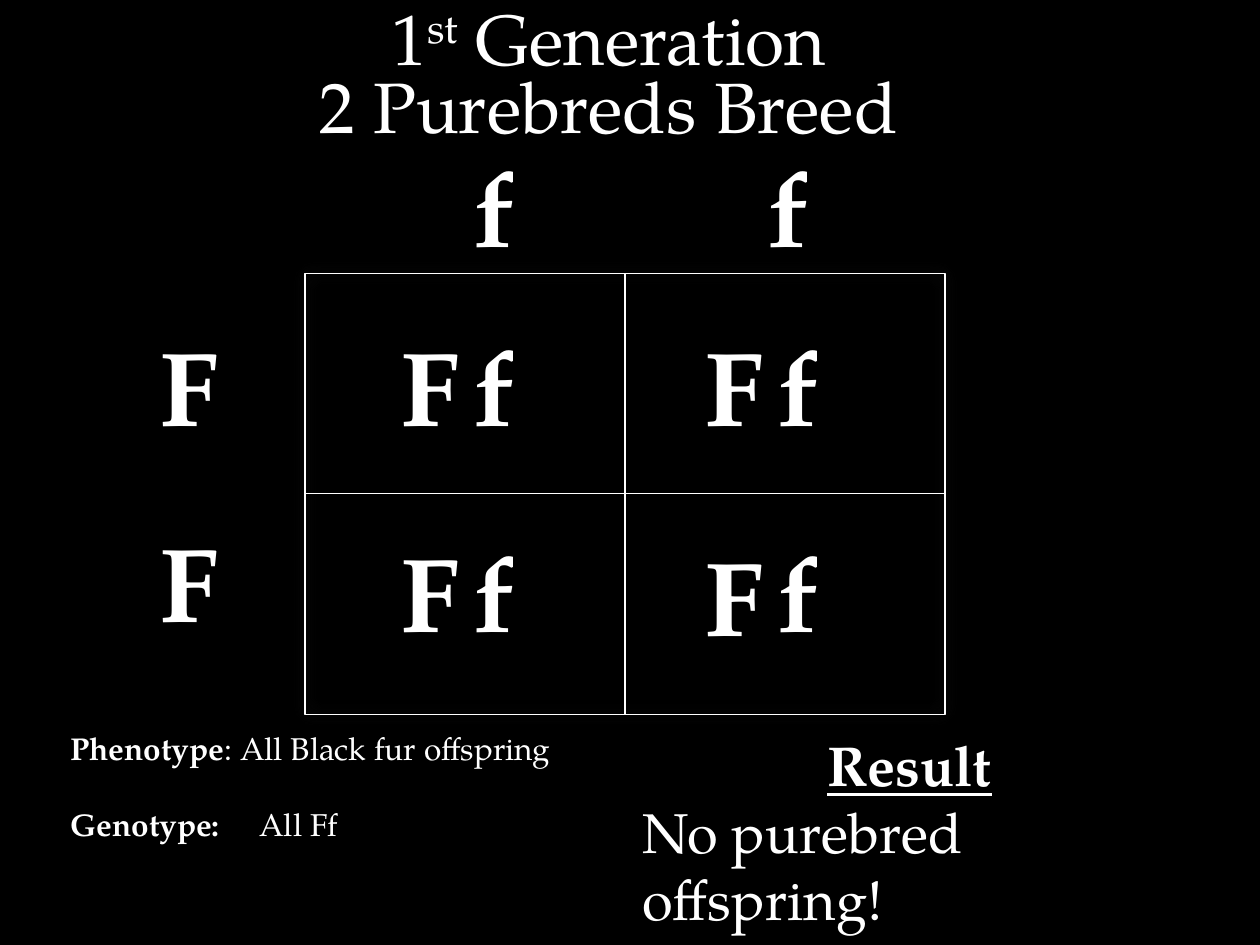
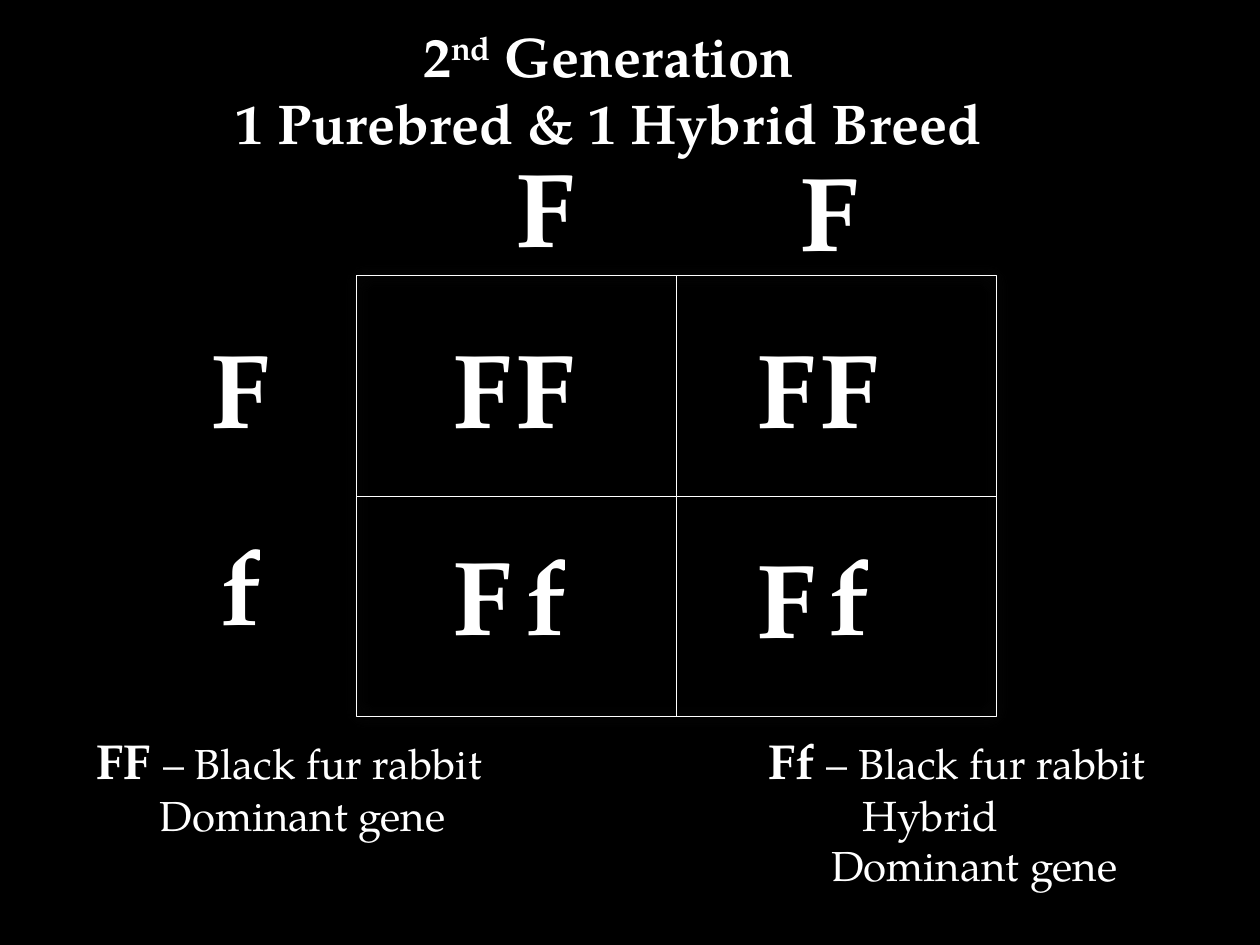
from dataclasses import dataclass

from lxml import etree
from pptx import Presentation
from pptx import util as u
from pptx.dml.color import RGBColor
from pptx.enum import shapes, text
from pptx.oxml.ns import qn


@dataclass(frozen=True)
class Theme:
    font: str = "TeX Gyre Pagella"
    ink: RGBColor = RGBColor(0xFF, 0xFF, 0xFF)
    ground: RGBColor = RGBColor(0, 0, 0)
    glow: str = "5F5F5F"
    gene: float = 60
    large_title: float = 40.7
    heading: float = 32
    key: float = 28
    legend: float = 24
    note: float = 18
    rule: float = 0.75


theme = Theme()


def write(frame, lines, size, align=text.PP_ALIGN.LEFT):
    frame.word_wrap = True
    for number, spans in enumerate(lines):
        para = frame.add_paragraph() if number else frame.paragraphs[0]
        para.alignment = align
        for words, style in spans:
            span = para.add_run()
            span.text = words
            span.font.name = theme.font
            span.font.color.rgb = theme.ink
            span.font.size = u.Pt(style.get("size", size))
            span.font.bold = style.get("bold", False)
            span.font.underline = style.get("underline", False)
            if "raised" in style:
                span.font._element.set("baseline", "30000")


def add_box(page, left, top, width, height, lines, size, align=text.PP_ALIGN.LEFT):
    box = page.shapes.add_textbox(u.Cm(left), u.Cm(top), u.Cm(width), u.Cm(height))
    write(box.text_frame, lines, size, align)
    box.text_frame.auto_size = text.MSO_AUTO_SIZE.SHAPE_TO_FIT_TEXT
    return box.text_frame.paragraphs


PLAIN = {}
BOLD = {"bold": True}
KEY = {"bold": True, "size": theme.key}
CENTER = text.PP_ALIGN.CENTER

SQUARE_WIDTH, SQUARE_HEIGHT = 12.9, 8.89
GENE_WIDTH, GENE_HEIGHT = 2.54, 2.82
ROW_LABEL_LEFT = -3.6
ROW_LABEL_TOPS = (0.84, 4.8)
CELL_LEFTS = (1.27, 2.54, 7.39, 8.66)
CELL_TOPS = ((0.84, 0.84, 0.84, 0.84), (5, 5, 5.08, 5))

crosses = [
    {
        "title": [[("1", PLAIN), ("st", {"raised": True}), (" Generation", PLAIN)],
                  [("2 Purebreds Breed", PLAIN)]],
        "title_top": 0, "title_size": theme.large_title, "spacing": 0.8,
        "origin": (6.15, 5.51),
        "columns": "ff", "rows": "FF",
        "column_places": ((2.54, -2.77), (8.46, -2.77)),
    },
    {
        "title": [[("2", BOLD), ("nd", {"bold": True, "raised": True}), (" Generation", BOLD)],
                  [("1 Purebred & 1 Hybrid Breed", BOLD)]],
        "title_top": 0.2, "title_size": theme.heading, "spacing": 1.0,
        "origin": (7.19, 5.56),
        "columns": "FF", "rows": "Ff",
        "column_places": ((2.54, -2.82), (8.26, -2.74)),
    },
]

deck = Presentation()
deck.slide_width, deck.slide_height = u.Cm(25.4), u.Cm(19.05)
ground = deck.slide_master.background.fill
ground.solid()
ground.fore_color.rgb = theme.ground

pages = []
for cross in crosses:
    page = deck.slides.add_slide(deck.slide_layouts[5])
    pages.append(page)

    title = page.shapes.title
    title.left, title.top = u.Cm(0.84), u.Cm(cross["title_top"])
    title.width, title.height = u.Cm(22.86), u.Cm(3.18)
    write(title.text_frame, cross["title"], cross["title_size"], CENTER)
    title.text_frame.auto_size = text.MSO_AUTO_SIZE.NONE
    title.text_frame.vertical_anchor = text.MSO_ANCHOR.MIDDLE
    for para in title.text_frame.paragraphs:
        para.line_spacing = cross["spacing"]
        para.space_before = u.Pt(0)

    left, top = cross["origin"]
    square = page.shapes.add_shape(shapes.MSO_SHAPE.RECTANGLE, u.Cm(left), u.Cm(top),
                                   u.Cm(SQUARE_WIDTH), u.Cm(SQUARE_HEIGHT))
    square.fill.background()
    square.line.color.rgb = theme.ink
    square.line.width = u.Pt(theme.rule)
    square.shadow.inherit = False
    effects = square._element.spPr.find(qn("a:effectLst"))
    glow = etree.SubElement(effects, qn("a:outerShdw"), blurRad=str(u.Pt(9)), dist="0", dir="0")
    tint = etree.SubElement(glow, qn("a:srgbClr"), val=theme.glow)
    etree.SubElement(tint, qn("a:alpha"), val="50000")

    middle, center = top + SQUARE_HEIGHT / 2, left + SQUARE_WIDTH / 2
    for start_x, start_y, end_x, end_y in (
        (center, top, center, top + SQUARE_HEIGHT),
        (left, middle, left + SQUARE_WIDTH, middle),
    ):
        divider = page.shapes.add_connector(shapes.MSO_CONNECTOR.STRAIGHT, u.Cm(start_x),
                                            u.Cm(start_y), u.Cm(end_x), u.Cm(end_y))
        divider.line.color.rgb = theme.ink
        divider.line.width = u.Pt(theme.rule)
        etree.SubElement(divider._element.spPr, qn("a:effectLst"))

    genes = [(gene, x, y) for gene, (x, y) in zip(cross["columns"], cross["column_places"])]
    for row_gene, label_top, cell_tops in zip(cross["rows"], ROW_LABEL_TOPS, CELL_TOPS):
        genes.append((row_gene, ROW_LABEL_LEFT, label_top))
        pairs = "".join("".join(sorted(row_gene + column)) for column in cross["columns"])
        genes.extend(zip(pairs, CELL_LEFTS, cell_tops))
    for gene, x, y in genes:
        add_box(page, left + x, top + y, GENE_WIDTH, GENE_HEIGHT,
                [[(gene, BOLD)]], theme.gene, CENTER)

first, second = pages

traits = add_box(first, 1.17, 14.58, 12.8, 2.57,
                 [[("Phenotype", BOLD), (": All Black fur offspring", PLAIN)],
                  [("Genotype:", BOLD), ("\tAll Ff", PLAIN)]], theme.note)
traits[1].space_before = u.Pt(21.7)
tabs = etree.SubElement(traits[1]._p.get_or_add_pPr(), qn("a:tabLst"))
etree.SubElement(tabs, qn("a:tab"), pos=str(u.Cm(3.81)), algn="l")

result = add_box(first, 12.7, 14.6, 11.86, 3,
                 [[("Result", {"bold": True, "underline": True})],
                  [("No purebred offspring!", PLAIN)]], theme.heading)
result[0]._p.get_or_add_pPr().set("marL", str(u.Cm(3.73)))

legends = [
    (1.7, 2.49, "FF ", [("Dominant gene", 1.27)]),
    (15.24, 3.51, "Ff ", [("Hybrid", 1.9), ("Dominant gene", 1.27)]),
]
for left, height, key, details in legends:
    lines = [[(key, KEY), ("– Black fur rabbit", PLAIN)]]
    lines += [[(detail, PLAIN)] for detail, indent in details]
    paras = add_box(second, left, 14.6, 9.73, height, lines, theme.legend)
    for para, (detail, indent) in zip(paras[1:], details):
        para._p.get_or_add_pPr().set("marL", str(u.Cm(indent)))

deck.save("out.pptx")
